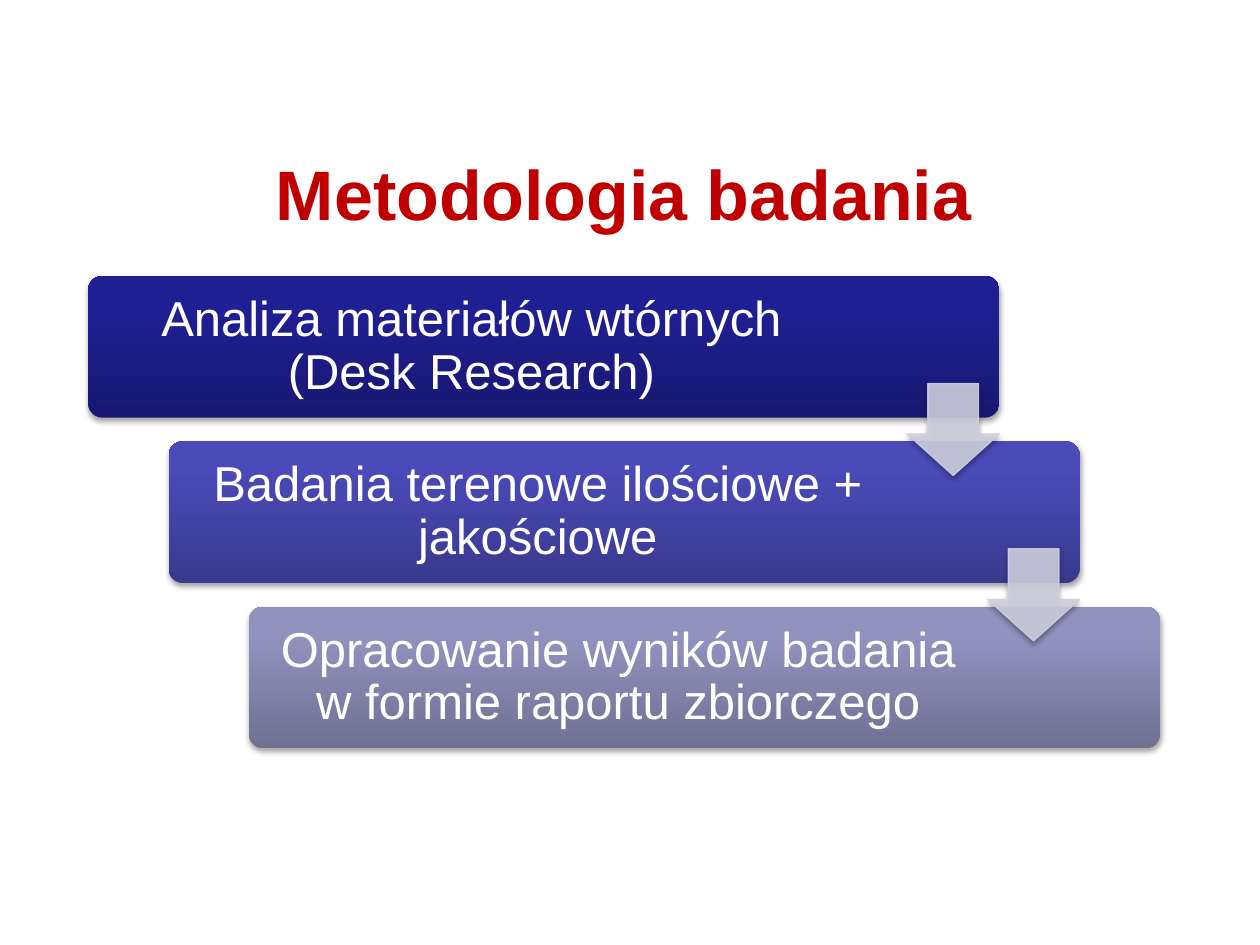
from copy import deepcopy
from dataclasses import dataclass

from pptx import Presentation
from pptx.dml.color import RGBColor
from pptx.enum.shapes import MSO_SHAPE
from pptx.enum.text import MSO_ANCHOR, PP_ALIGN
from pptx.oxml import parse_xml
from pptx.oxml.ns import nsdecls, qn
from pptx.util import Pt


@dataclass(frozen=True)
class Theme:
    font: str = "Arial"
    title_size: int = 40
    step_size: int = 28
    title_color: str = "C00000"
    step_color: str = "FFFFFF"
    arrow_color: str = "CECEDE"
    arrow_opacity: int = 90
    # Gradient stops of each step, from bottom to top
    step_gradients: tuple = (
        ("181872", "1F1F94", "1D1D97"),
        ("39398E", "4A4AB8", "4848BB"),
        ("707093", "9292BF", "9191C0"),
    )
    gradient_positions: tuple = (0, 0.8, 1)


THEME = Theme()

# Step text and the width of its text area
STEPS = (
    ("Analiza materiałów wtórnych (Desk Research)", 437.8),
    ("Badania terenowe ilościowe + jakościowe", 421.9),
    ("Opracowanie wyników badania w formie raportu zbiorczego", 421.9),
)


def add_text(slide, text, left, top, width, height, *, size, color,
             bold=False, inset=0, line_spacing=1.0):
    box = slide.shapes.add_textbox(Pt(left), Pt(top), Pt(width), Pt(height))
    frame = box.text_frame
    frame.word_wrap = True
    frame.vertical_anchor = MSO_ANCHOR.MIDDLE
    frame.margin_left = frame.margin_right = Pt(inset)
    frame.margin_top = frame.margin_bottom = Pt(inset)
    paragraph = frame.paragraphs[0]
    paragraph.alignment = PP_ALIGN.CENTER
    paragraph.line_spacing = line_spacing
    run = paragraph.add_run()
    run.text = text
    run.font.name = THEME.font
    run.font.size = Pt(size)
    run.font.bold = bold
    run.font.color.rgb = RGBColor.from_string(color)


def add_soft_shadow(shape):
    """Call after the fill and line are set, so the effect comes last."""
    shape.shadow.inherit = False
    effects = shape._element.spPr.find(qn("a:effectLst"))
    effects.append(parse_xml(
        f'<a:outerShdw {nsdecls("a")} blurRad="{Pt(3.1)}" dist="{Pt(1.8)}" '
        'dir="5400000" rotWithShape="0"><a:srgbClr val="000000">'
        '<a:alpha val="35000"/></a:srgbClr></a:outerShdw>'))


def fill_gradient(shape, colors):
    fill = shape.fill
    fill.gradient()
    fill.gradient_angle = 90
    stop_list = shape._element.spPr.find(qn("a:gradFill")).find(qn("a:gsLst"))
    stop_list.append(deepcopy(stop_list[-1]))
    for stop, color, position in zip(fill.gradient_stops, colors,
                                     THEME.gradient_positions):
        stop.color.rgb = RGBColor.from_string(color)
        stop.position = position


def add_step(slide, text, text_width, colors, left, top, width, height):
    card = slide.shapes.add_shape(MSO_SHAPE.ROUNDED_RECTANGLE, Pt(left),
                                  Pt(top), Pt(width), Pt(height))
    card.adjustments[0] = 0.1
    fill_gradient(card, colors)
    card.line.fill.background()
    add_soft_shadow(card)
    add_text(slide, text, left, top, text_width, height,
             size=THEME.step_size, color=THEME.step_color,
             inset=8.4, line_spacing=0.9)


def add_step_arrow(slide, left, top, size):
    arrow = slide.shapes.add_shape(MSO_SHAPE.DOWN_ARROW, Pt(left), Pt(top),
                                   Pt(size), Pt(size))
    arrow.adjustments[0] = 0.55
    arrow.adjustments[1] = 0.45
    arrow.line.width = Pt(0.75)
    arrow.fill.solid()
    arrow.line.fill.solid()
    for color_format in (arrow.fill.fore_color, arrow.line.color):
        color_format.rgb = RGBColor.from_string(THEME.arrow_color)
    for color in arrow._element.spPr.iter(qn("a:srgbClr")):
        color.append(parse_xml(f'<a:alpha {nsdecls("a")} '
                               f'val="{THEME.arrow_opacity * 1000}"/>'))
    add_soft_shadow(arrow)


def add_title(slide, left, top, width, height):
    add_text(slide, "Metodologia badania", left, top, width, height,
             size=THEME.title_size, color=THEME.title_color, bold=True)


def add_staircase(slide, left, top, width, height):
    step_width, step_height, arrow_size = 0.85 * width, 0.3 * height, 52.6
    shift = (width - step_width) / (len(STEPS) - 1)
    drop = (height - step_height) / (len(STEPS) - 1)

    # Steps, each lower and further right
    for index, (text, text_width) in enumerate(STEPS):
        add_step(slide, text, text_width, THEME.step_gradients[index],
                 left + index * shift, top + index * drop,
                 step_width, step_height)

    # Arrows, right-aligned with the upper step and centred on the gap
    for index in range(len(STEPS) - 1):
        gap_middle = top + index * drop + (step_height + drop) / 2
        add_step_arrow(slide, left + index * shift + step_width - arrow_size,
                       gap_middle - arrow_size / 2, arrow_size)


def main():
    presentation = Presentation()
    presentation.slide_width, presentation.slide_height = Pt(720), Pt(540)
    slide = presentation.slides.add_slide(presentation.slide_layouts[6])
    add_title(slide, 50.4, 90, 612, 40.3)
    add_staircase(slide, 50.4, 157.7, 612.5, 270)
    presentation.save("out.pptx")


if __name__ == "__main__":
    main()
